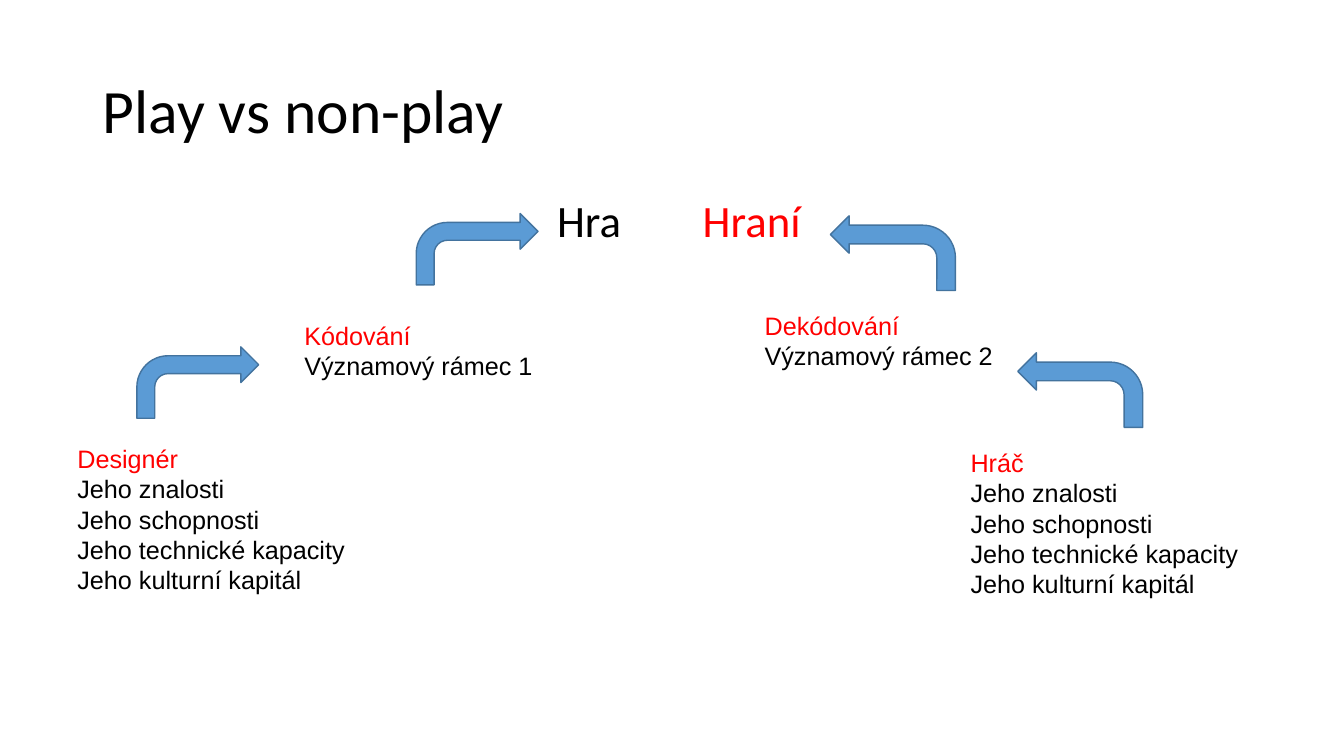
from dataclasses import dataclass

from lxml import etree
from pptx import Presentation
from pptx.dml.color import RGBColor
from pptx.enum.shapes import MSO_SHAPE
from pptx.enum.text import MSO_ANCHOR
from pptx.oxml.ns import qn
from pptx.util import Cm, Pt

BENT_ARROW = MSO_SHAPE.BENT_ARROW
MIDDLE, TOP = MSO_ANCHOR.MIDDLE, MSO_ANCHOR.TOP


@dataclass(frozen=True)
class Theme:
    heading_font: str = "Calibri"
    body_font: str = "Arial"
    title_size: int = 44
    concept_size: int = 32
    body_size: int = 18
    text: RGBColor = RGBColor(0, 0, 0)
    accent: RGBColor = RGBColor(255, 0, 0)
    arrow_fill: RGBColor = RGBColor(0x5B, 0x9B, 0xD5)
    arrow_line: RGBColor = RGBColor(0x43, 0x73, 0x9E)


THEME = Theme()

# Places are left, top, width, height in centimetres.
TITLE = ("Play vs non-play", (2.34, 1.02, 29.21, 3.68))
CONCEPTS = ("Hra", "Hraní")
CONCEPTS_PLACE = (13.79, 4.88, 8.43, 3.66)
CONCEPTS_TAB = 3.67

PERSON_TRAITS = ["Jeho znalosti", "Jeho schopnosti",
                 "Jeho technické kapacity", "Jeho kulturní kapitál"]
NOTES = [
    ("Kódování", ["Významový rámec 1"], (7.42, 7.95, 6.45, 1.8)),
    ("Dekódování", ["Významový rámec 2"], (19.02, 7.7, 7.06, 1.8)),
    ("Designér", PERSON_TRAITS, (1.7, 11.05, 8.2, 4.11)),
    ("Hráč", PERSON_TRAITS, (24.21, 11.15, 8.53, 4.11)),
]

# Place, and whether the arrow points left.
ARROWS = [
    ((10.49, 5.38, 3.07, 1.8), False),
    ((3.45, 8.74, 3.07, 1.8), False),
    ((20.93, 5.44, 3.15, 1.88), True),
    ((25.65, 8.89, 3.15, 1.88), True),
]


def add_text_frame(page, place, anchor=TOP):
    frame = page.shapes.add_textbox(*map(Cm, place)).text_frame
    frame.word_wrap = True
    frame.vertical_anchor = anchor
    return frame


def style(para, font, size, color):
    para.font.name = font
    para.font.size = Pt(size)
    para.font.color.rgb = color


def add_title(page):
    text, place = TITLE
    para = add_text_frame(page, place, MIDDLE).paragraphs[0]
    para.text = text
    para.line_spacing = 0.9
    style(para, THEME.heading_font, THEME.title_size, THEME.text)


def add_concepts(page):
    """Set the two concepts on one line, parted by a tab stop."""
    para = add_text_frame(page, CONCEPTS_PLACE).paragraphs[0]
    para.line_spacing = 0.9
    tabs = etree.SubElement(para._p.get_or_add_pPr(), qn("a:tabLst"))
    etree.SubElement(tabs, qn("a:tab"), pos=str(Cm(CONCEPTS_TAB)), algn="l")
    style(para, THEME.heading_font, THEME.concept_size, THEME.text)
    game, playing = CONCEPTS
    para.add_run().text = game + "\t"
    span = para.add_run()
    span.text = playing
    span.font.color.rgb = THEME.accent


def add_note(page, heading, lines, place):
    frame = add_text_frame(page, place)
    frame.text = "\n".join([heading, *lines])
    for index, para in enumerate(frame.paragraphs):
        color = THEME.text if index else THEME.accent
        style(para, THEME.body_font, THEME.body_size, color)


def add_arrow(page, place, points_left):
    arrow = page.shapes.add_shape(BENT_ARROW, *map(Cm, place))
    arrow.shadow.inherit = False
    arrow.fill.solid()
    arrow.fill.fore_color.rgb = THEME.arrow_fill
    arrow.line.color.rgb = THEME.arrow_line
    arrow.line.width = Pt(1)
    if points_left:
        arrow._element.spPr.find(qn("a:xfrm")).set("flipH", "1")


def main():
    deck = Presentation()
    deck.slide_width, deck.slide_height = Cm(33.87), Cm(19.05)
    page = deck.slides.add_slide(deck.slide_layouts[6])
    add_title(page)
    add_concepts(page)
    for place, points_left in ARROWS:
        add_arrow(page, place, points_left)
    for heading, lines, place in NOTES:
        add_note(page, heading, lines, place)
    deck.save("out.pptx")


if __name__ == "__main__":
    main()
